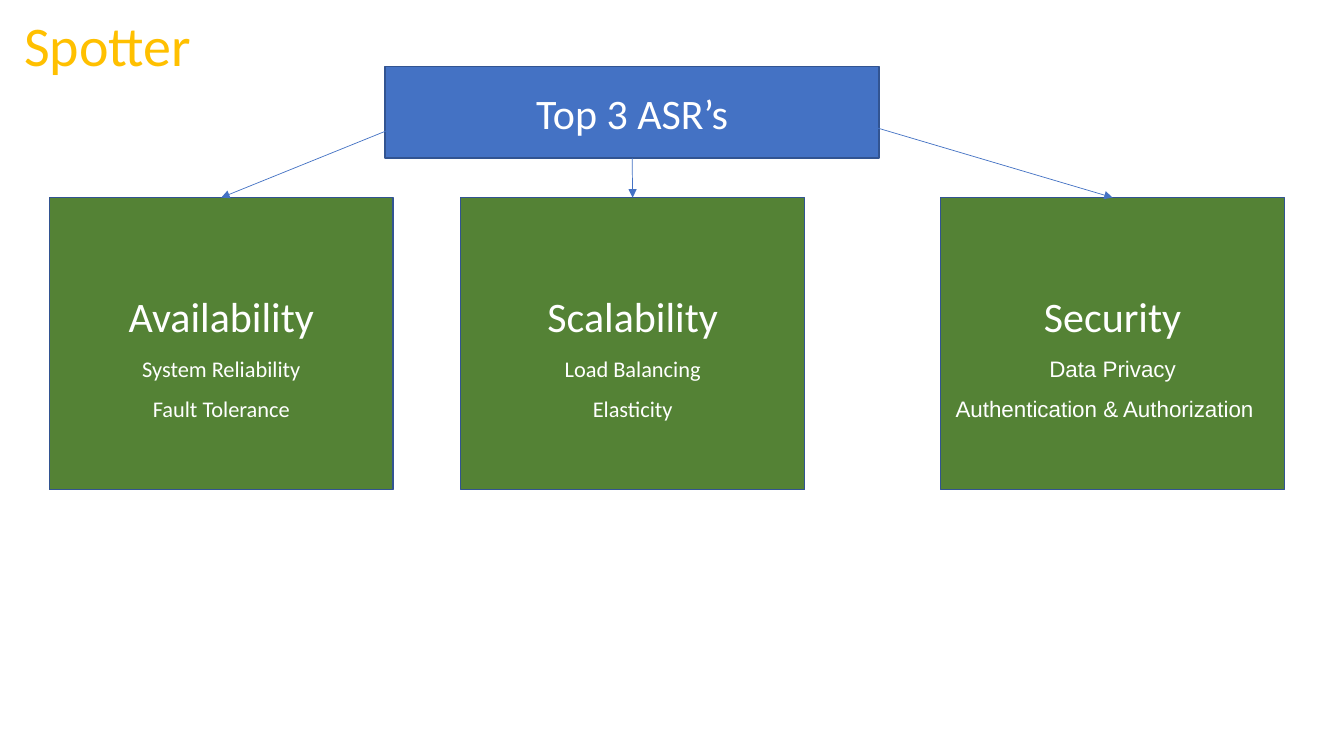
from lxml.etree import SubElement
from pptx import Presentation
from pptx.dml.color import RGBColor
from pptx.enum.shapes import MSO_CONNECTOR, MSO_SHAPE
from pptx.enum.text import MSO_ANCHOR, MSO_AUTO_SIZE, PP_ALIGN
from pptx.oxml.ns import qn
from pptx.util import Inches, Pt

BLUE, GREEN, BORDER, GOLD, WHITE = "4472C4", "548235", "325491", "FFC000", "FFFFFF"
HEADER_BOX = (3.82, 0.66, 4.9, 0.91)
CARD_TOP, CARD_WIDTH, CARD_HEIGHT = 1.96, 3.41, 2.9
SIDE_ARROW_TOP = 1.21

# Left edge, heading, detail lines with alignment, detail font, arrow start
CARDS = [
    (0.49, "Availability",
     [("System Reliability", PP_ALIGN.CENTER), ("Fault Tolerance", PP_ALIGN.CENTER)],
     "Calibri", (4.05, SIDE_ARROW_TOP)),
    (4.57, "Scalability",
     [("Load Balancing", PP_ALIGN.CENTER), ("Elasticity", PP_ALIGN.CENTER)],
     "Calibri", (6.27, HEADER_BOX[1] + HEADER_BOX[3])),
    (9.33, "Security",
     [("Data Privacy", PP_ALIGN.CENTER),
      (" Authentication & Authorization", PP_ALIGN.LEFT)],
     "Arial", (8.5, SIDE_ARROW_TOP)),
]


def color(hex_value):
    return RGBColor.from_string(hex_value)


def style_paragraph(paragraph, text, size, font="Calibri", text_color=WHITE,
                    alignment=PP_ALIGN.CENTER):
    paragraph.text = text
    paragraph.alignment = alignment
    paragraph.font.size = Pt(size)
    paragraph.font.name = font
    paragraph.font.color.rgb = color(text_color)


def add_box(slide, box, fill):
    shape = slide.shapes.add_shape(MSO_SHAPE.RECTANGLE, *map(Inches, box))
    shape.shadow.inherit = False
    shape.fill.solid()
    shape.fill.fore_color.rgb = color(fill)
    shape.line.color.rgb = color(BORDER)
    shape.line.width = Pt(1)
    frame = shape.text_frame
    frame.word_wrap = True
    frame.vertical_anchor = MSO_ANCHOR.MIDDLE
    return frame


def add_title(slide, box):
    frame = slide.shapes.add_textbox(*map(Inches, box)).text_frame
    frame.word_wrap = True
    frame.auto_size = MSO_AUTO_SIZE.SHAPE_TO_FIT_TEXT
    style_paragraph(frame.paragraphs[0], "Spotter", 40, text_color=GOLD,
                    alignment=PP_ALIGN.LEFT)


def add_header(slide, box):
    frame = add_box(slide, box, BLUE)
    style_paragraph(frame.paragraphs[0], "Top 3 ASR’s", 30)


def add_card(slide, box, heading, details, font):
    frame = add_box(slide, box, GREEN)
    style_paragraph(frame.paragraphs[0], heading, 30)
    for text, alignment in details:
        style_paragraph(frame.add_paragraph(), text, 16, font, alignment=alignment)
    for paragraph in frame.paragraphs:
        paragraph.line_spacing = 1.5


def add_arrow(slide, start, end):
    connector = slide.shapes.add_connector(
        MSO_CONNECTOR.STRAIGHT, *map(Inches, (*start, *end)))
    connector.line.color.rgb = color(BLUE)
    connector.line.width = Pt(0.5)
    SubElement(connector.line._get_or_add_ln(), qn("a:tailEnd"), type="triangle")
    SubElement(connector._element.spPr, qn("a:effectLst"))


def main():
    presentation = Presentation()
    presentation.slide_width = Inches(13.33)
    presentation.slide_height = Inches(7.5)
    slide = presentation.slides.add_slide(presentation.slide_layouts[6])

    # Title and header
    add_title(slide, (0.14, 0.06, 2.75, 0.77))
    add_header(slide, HEADER_BOX)

    # Cards, each with an arrow to the middle of its top edge
    for left, heading, details, font, arrow_start in CARDS:
        add_card(slide, (left, CARD_TOP, CARD_WIDTH, CARD_HEIGHT),
                 heading, details, font)
        add_arrow(slide, arrow_start, (left + CARD_WIDTH / 2, CARD_TOP))

    presentation.save("out.pptx")


if __name__ == "__main__":
    main()
